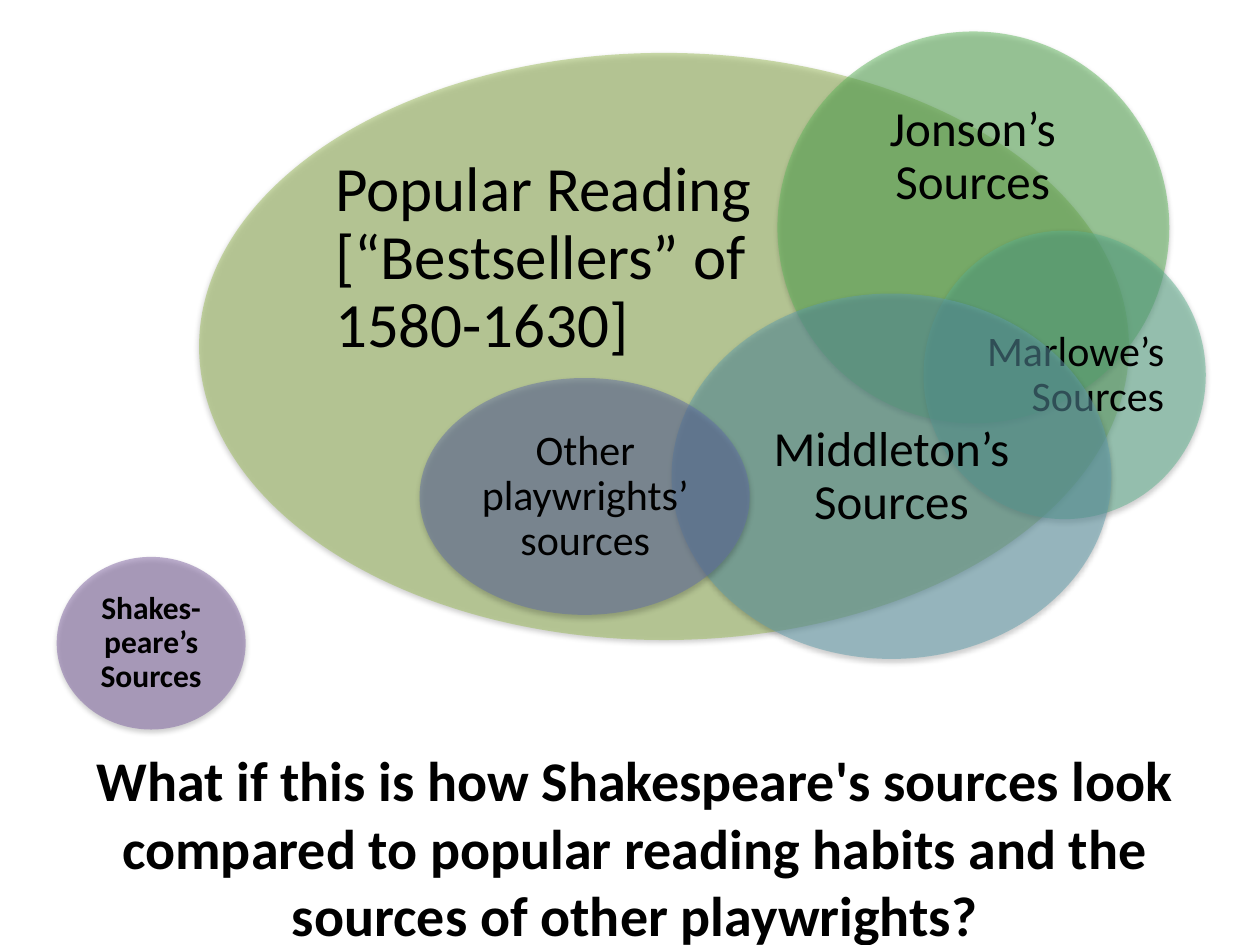
from dataclasses import dataclass

from lxml import etree
from pptx import Presentation
from pptx import util as u
from pptx.dml.color import RGBColor
from pptx.enum import shapes, text
from pptx.oxml import ns

TOP, MIDDLE = text.MSO_ANCHOR.TOP, text.MSO_ANCHOR.MIDDLE
LEFT, CENTER, RIGHT = text.PP_ALIGN.LEFT, text.PP_ALIGN.CENTER, text.PP_ALIGN.RIGHT


@dataclass(frozen=True)
class Theme:
    font: str = "Calibri"
    ink: str = "000000"
    popular: str = "9BBB59"
    jonson: str = "5FB65B"
    marlowe: str = "5DB18E"
    middleton: str = "5F9DAC"
    others: str = "626EA7"
    shakespeare: str = "8064A2"
    popular_size: int = 36
    question_size: int = 32
    large: int = 28
    medium: int = 24
    small: int = 18
    opacity: int = 50
    shadow_opacity: int = 38


THEME = Theme()

CIRCLES = [
    ("Popular Reading\n[“Bestsellers” of\n1580-1630]", THEME.popular,
     (1.58, 0.42, 7.38, 4.66), (2.66, 1.1, 5.22, 3.3),
     dict(size=THEME.popular_size, align=LEFT, anchor=TOP, insets=(0, 0.15, 0.15, 0.15))),
    ("Jonson’s Sources", THEME.jonson,
     (6.17, 0.25, 3.11, 3.11), (6.62, 0.71, 2.2, 2.2),
     dict(size=THEME.large, anchor=TOP, insets=(0.12,) * 4)),
    ("Marlowe’s Sources", THEME.marlowe,
     (7.33, 1.83, 2.24, 2.29), (7.66, 2.17, 1.58, 1.62),
     dict(size=THEME.medium, align=RIGHT, insets=(0.1, 0.1, 0, 0.1))),
    ("Middleton’s Sources", THEME.middleton,
     (5.33, 2.33, 3.49, 2.9), (5.84, 2.76, 2.47, 2.05),
     dict(size=THEME.large, insets=(0.12,) * 4)),
    ("Other playwrights’ sources", THEME.others,
     (3.33, 3, 2.62, 1.88), (3.72, 3.28, 1.85, 1.33),
     dict(size=THEME.medium, insets=(0.1,) * 4)),
    ("Shakes-peare’s Sources", THEME.shakespeare,
     (0.45, 4.42, 1.5, 1.37), (0.67, 4.62, 1.06, 0.97),
     dict(size=THEME.small, bold=True, insets=(0.07,) * 4)),
]


def inches(box):
    return [u.Inches(length) for length in box]


def add_text(parent, box, words, size, bold=False, align=CENTER, anchor=MIDDLE,
             insets=(0.1, 0.05, 0.1, 0.05), spacing=0.9):
    frame = parent.add_textbox(*inches(box)).text_frame
    frame.word_wrap = True
    frame.vertical_anchor = anchor
    (frame.margin_left, frame.margin_top,
     frame.margin_right, frame.margin_bottom) = inches(insets)
    paragraph = frame.paragraphs[0]
    paragraph.text = words
    paragraph.alignment = align
    paragraph.line_spacing = spacing
    for run in paragraph.runs:
        run.font.name = THEME.font
        run.font.size = u.Pt(size)
        run.font.bold = bold
        run.font.color.rgb = RGBColor.from_string(THEME.ink)


def add_alpha(color, percent):
    etree.SubElement(color, ns.qn("a:alpha"), val=str(percent * 1000))


def add_shadow(shape):
    shape.shadow.inherit = False
    effects = shape.element.spPr.find(ns.qn("a:effectLst"))
    shadow = etree.SubElement(
        effects, ns.qn("a:outerShdw"), blurRad=str(u.Pt(3.1)), dist=str(u.Pt(1.6)),
        dir=str(90 * 60000), rotWithShape="0")
    color = etree.SubElement(shadow, ns.qn("a:srgbClr"), val=THEME.ink)
    add_alpha(color, THEME.shadow_opacity)


def add_circle(parent, box, fill):
    circle = parent.add_shape(shapes.MSO_SHAPE.OVAL, *inches(box))
    circle.fill.solid()
    circle.fill.fore_color.rgb = RGBColor.from_string(fill)
    add_alpha(circle.element.spPr.find(".//" + ns.qn("a:srgbClr")), THEME.opacity)
    circle.line.fill.background()
    add_shadow(circle)


def add_venn(slide):
    venn = slide.shapes.add_group_shape().shapes
    for words, fill, circle_box, label_box, style in CIRCLES:
        add_circle(venn, circle_box, fill)
        add_text(venn, label_box, words, **style)


def add_question(slide, box):
    add_text(slide.shapes, box,
             "What if this is how Shakespeare's sources look compared to popular "
             "reading habits and the sources of other playwrights?",
             size=THEME.question_size, bold=True, spacing=1.0)


def main():
    deck = Presentation()
    deck.slide_width, deck.slide_height = u.Inches(10), u.Inches(7.5)
    slide = deck.slides.add_slide(deck.slide_layouts[6])
    add_venn(slide)
    add_question(slide, (0.33, 6.42, 9.42, 0.6))
    deck.save("out.pptx")


if __name__ == "__main__":
    main()
